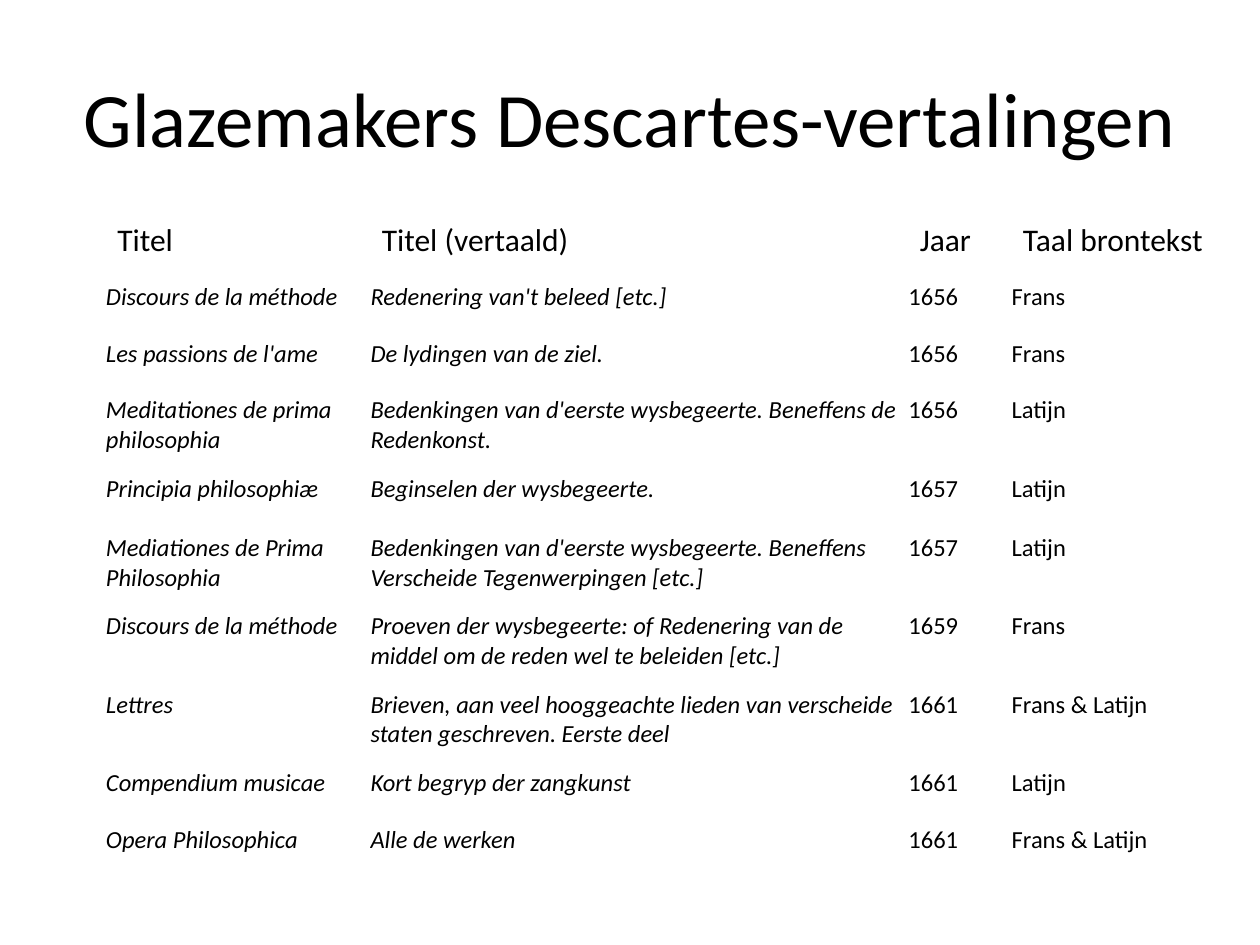
from dataclasses import dataclass

from pptx import Presentation
from pptx.dml.color import RGBColor
from pptx.enum.text import MSO_ANCHOR, PP_ALIGN
from pptx.util import Pt

FONT = "Calibri"
BLACK = "000000"
HEADERS = ("Titel", "Titel (vertaald)", "Jaar", "Taal brontekst")
COLUMN_WIDTHS = (151.2, 307.4, 59, 123.2)
HEADER_HEIGHT = 37.4
TABLE_LEFT, TABLE_TOP = 59.8, 123.1
CELL_INSET = 0.75


@dataclass
class Translation:
    title: str
    translated: str
    year: str
    language: str
    height: float = 32.4


TWO_LINES = 44.8
TRANSLATIONS = (
    Translation("Discours de la méthode", "Redenering van't beleed [etc.]", "1656", "Frans"),
    Translation("Les passions de l'ame", "De lydingen van de ziel.", "1656", "Frans"),
    Translation("Meditationes de prima philosophia",
                "Bedenkingen van d'eerste wysbegeerte. Beneffens de Redenkonst.",
                "1656", "Latijn", TWO_LINES),
    Translation("Principia philosophiæ", "Beginselen der wysbegeerte.", "1657", "Latijn", 33.8),
    Translation("Mediationes de Prima Philosophia",
                "Bedenkingen van d'eerste wysbegeerte. Beneffens Verscheide Tegenwerpingen [etc.]",
                "1657", "Latijn", TWO_LINES),
    Translation("Discours de la méthode",
                "Proeven der wysbegeerte: of Redenering van de middel om de reden wel te beleiden [etc.]",
                "1659", "Frans", TWO_LINES),
    Translation("Lettres",
                "Brieven, aan veel hooggeachte lieden van verscheide staten geschreven. Eerste deel",
                "1661", "Frans & Latijn", TWO_LINES),
    Translation("Compendium musicae", "Kort begryp der zangkunst", "1661", "Latijn"),
    Translation("Opera Philosophica", "Alle de werken", "1661", "Frans & Latijn"),
)


def color(value: str) -> RGBColor:
    return RGBColor.from_string(value)


def add_span(para, text: str, size: float, italic: bool = False) -> None:
    span = para.add_run()
    span.text = text
    span.font.name = FONT
    span.font.size = Pt(size)
    span.font.bold = False
    span.font.italic = italic
    span.font.color.rgb = color(BLACK)


def add_title(page, text: str) -> None:
    box = page.shapes.add_textbox(Pt(36), Pt(21.6), Pt(648), Pt(90))
    frame = box.text_frame
    frame.word_wrap = True
    frame.vertical_anchor = MSO_ANCHOR.MIDDLE
    para = frame.paragraphs[0]
    para.alignment = PP_ALIGN.CENTER
    add_span(para, text, 44)


def fill_cell(cell, text: str, size: float, italic: bool = False) -> None:
    cell.fill.background()
    add_span(cell.text_frame.paragraphs[0], text, size, italic)


def add_translation_table(page) -> None:
    heights = [HEADER_HEIGHT] + [entry.height for entry in TRANSLATIONS]
    table = page.shapes.add_table(
        len(heights), len(HEADERS), Pt(TABLE_LEFT), Pt(TABLE_TOP),
        Pt(sum(COLUMN_WIDTHS)), Pt(sum(heights))).table
    table.first_row = False
    table.horz_banding = False
    for column, width in zip(table.columns, COLUMN_WIDTHS):
        column.width = Pt(width)
    for row, height in zip(table.rows, heights):
        row.height = Pt(height)

    # Header row
    for index, header in enumerate(HEADERS):
        fill_cell(table.cell(0, index), header, 18)

    # One row per translation, with both titles in italics
    for number, entry in enumerate(TRANSLATIONS, start=1):
        values = (entry.title, entry.translated, entry.year, entry.language)
        for index, value in enumerate(values):
            cell = table.cell(number, index)
            cell.margin_left = cell.margin_right = cell.margin_top = Pt(CELL_INSET)
            cell.margin_bottom = Pt(0)
            fill_cell(cell, value, 14, italic=index < 2)


def main() -> None:
    deck = Presentation()
    deck.slide_width, deck.slide_height = Pt(720), Pt(540)
    page = deck.slides.add_slide(deck.slide_layouts[6])
    add_title(page, "Glazemakers Descartes-vertalingen")
    add_translation_table(page)
    deck.save("out.pptx")


if __name__ == "__main__":
    main()
